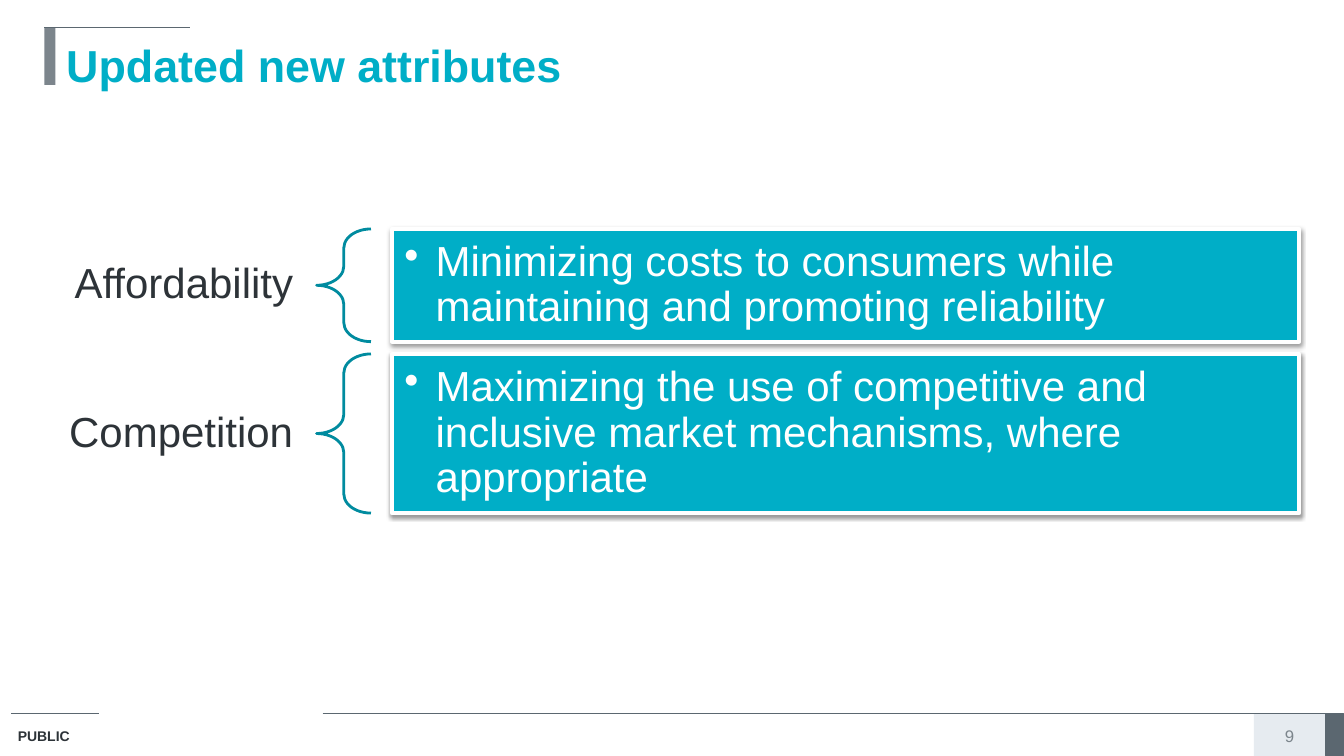
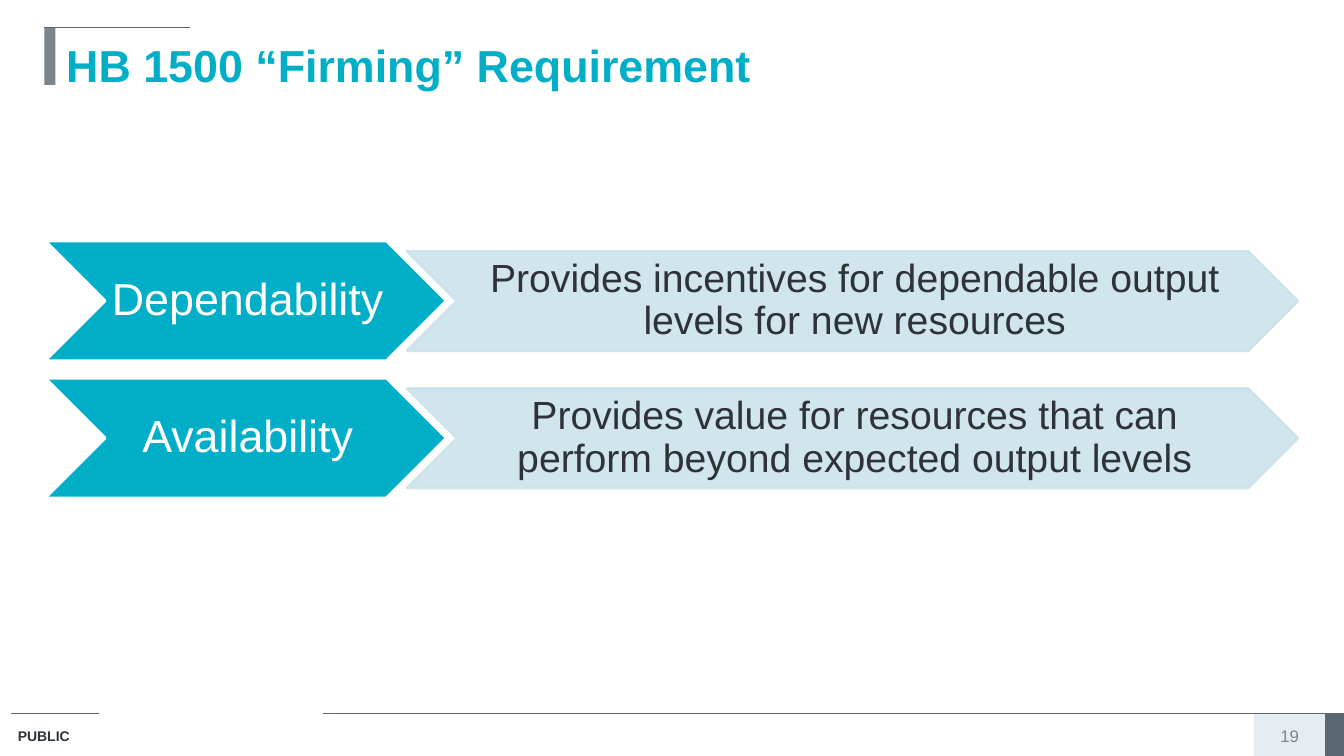
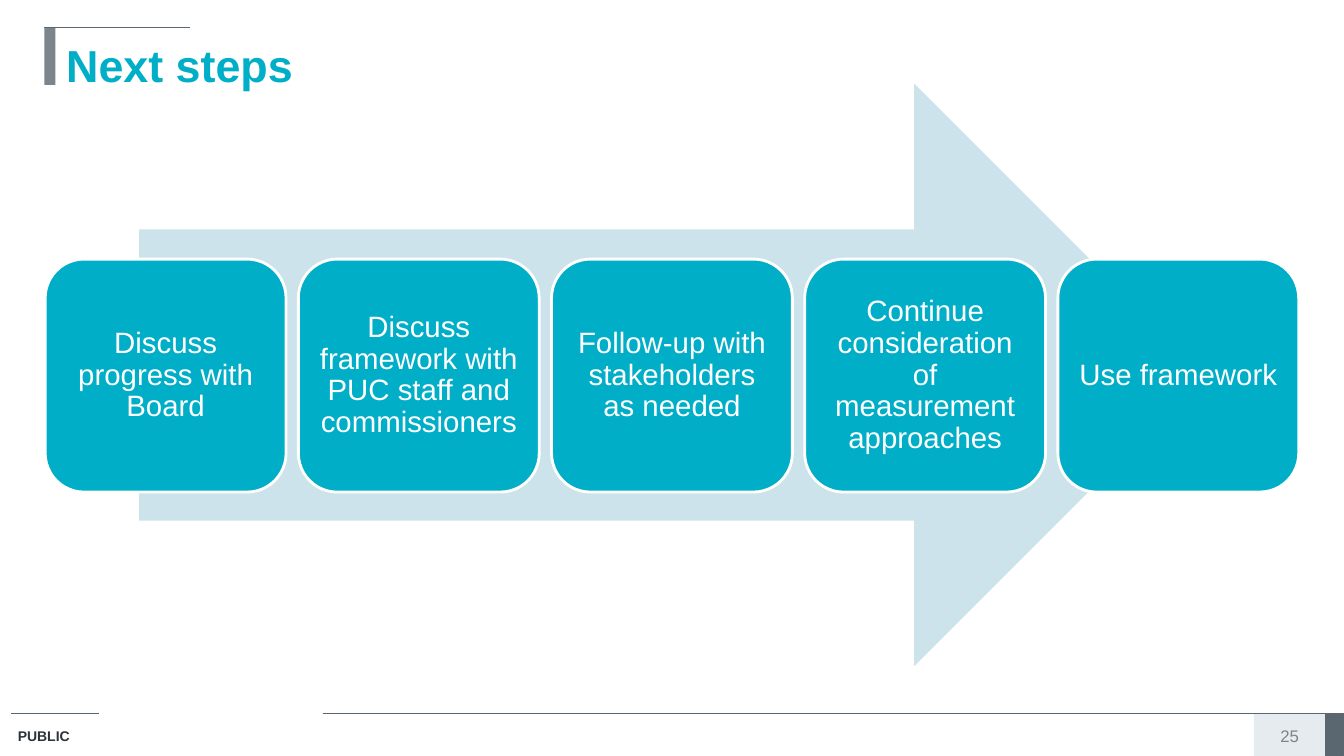
from lxml import etree
from pptx import Presentation
from pptx.dml.color import RGBColor
from pptx.enum.shapes import MSO_CONNECTOR, MSO_SHAPE
from pptx.enum.text import MSO_ANCHOR, PP_ALIGN
from pptx.oxml.ns import qn
from pptx.util import Cm, Pt

RECT = MSO_SHAPE.RECTANGLE
BRACE = MSO_SHAPE.LEFT_BRACE
CHEVRON = MSO_SHAPE.CHEVRON
ARROW = MSO_SHAPE.RIGHT_ARROW
ROUNDED = MSO_SHAPE.ROUNDED_RECTANGLE
STRAIGHT = MSO_CONNECTOR.STRAIGHT
TOP, MIDDLE = MSO_ANCHOR.TOP, MSO_ANCHOR.MIDDLE
LEFT, CENTER, RIGHT = PP_ALIGN.LEFT, PP_ALIGN.CENTER, PP_ALIGN.RIGHT

TEAL = RGBColor(0x00, 0xAE, 0xC7)
DARK_TEAL = RGBColor(0x00, 0x8B, 0x9F)
PALE_TEAL = RGBColor(0xCC, 0xE3, 0xEB)
INK = RGBColor(0x2D, 0x33, 0x38)
SLATE = RGBColor(0x5B, 0x67, 0x70)
GRAY = RGBColor(0x7C, 0x85, 0x8C)
MIST = RGBColor(0xE6, 0xEB, 0xF0)
WHITE = RGBColor(0xFF, 0xFF, 0xFF)

FONT = "Arial"
MARGIN = 1.14
TEXT_INSETS = (0.25, 0.13, 0.25, 0.13)
CHEVRON_INSETS = (0.1, 0.05, 0, 0.05)


class Deck:
    def __init__(self):
        self.prs = Presentation()
        self.prs.slide_width, self.prs.slide_height = Cm(33.87), Cm(19.05)
        self.slide = None

    def new_slide(self, title, number):
        self.slide = self.prs.slides.add_slide(self.prs.slide_layouts[6])
        self.shape(RECT, 31.6, 17.98, 1.98, 1.07, MIST)
        self.shape(RECT, 33.4, 17.98, 0.46, 1.07, SLATE, SLATE, 0.75)
        self.rule(0.28, 2.49, 17.98)
        self.rule(8.13, 33.53, 17.98)
        self.text(0.2, 18.21, 2.62, 0.71, "PUBLIC", 10, INK, bold=True)
        self.shape(RECT, 1.12, 0.69, 0.28, 1.45, GRAY)
        self.rule(1.12, 4.8, 0.69)
        self.text(1.42, 0.69, 31.32, 1.45, title, 32, TEAL, bold=True,
                  insets=(0.25, 0.25, 0.25, 0))
        self.text(31.6, 18.24, 1.8, 0.61, str(number), 12, GRAY, CENTER, MIDDLE)

    def rule(self, start, end, y):
        line = self.slide.shapes.add_connector(STRAIGHT, Cm(start), Cm(y), Cm(end), Cm(y))
        line.line.color.rgb = SLATE
        line.line.width = Pt(0.75)
        etree.SubElement(line._element.spPr, qn("a:effectLst"))

    def shape(self, kind, x, y, w, h, fill=None, outline=None, width=2):
        shape = self.slide.shapes.add_shape(kind, Cm(x), Cm(y), Cm(w), Cm(h))
        shape.shadow.inherit = False
        if fill is None:
            shape.fill.background()
        else:
            shape.fill.solid()
            shape.fill.fore_color.rgb = fill
        if outline is None:
            shape.line.fill.background()
        else:
            shape.line.color.rgb = outline
            shape.line.width = Pt(width)
        return shape

    def text(self, x, y, w, h, words, size, color, align=LEFT, anchor=TOP,
             insets=TEXT_INSETS, spacing=None, bold=False):
        box = self.slide.shapes.add_textbox(Cm(x), Cm(y), Cm(w), Cm(h))
        self.label(box, words, size, color, align, anchor, insets, spacing, bold)

    def label(self, shape, words, size, color, align=CENTER, anchor=MIDDLE,
              insets=TEXT_INSETS, spacing=0.9, bold=False, bullet=None):
        frame = shape.text_frame
        frame.text = words
        frame.word_wrap = True
        frame.vertical_anchor = anchor
        (frame.margin_left, frame.margin_top,
         frame.margin_right, frame.margin_bottom) = map(Cm, insets)
        paragraph = frame.paragraphs[0]
        if bullet:
            properties = paragraph._p.get_or_add_pPr()
            properties.set("marL", str(Cm(0.79)))
            properties.set("indent", str(-Cm(0.79)))
            etree.SubElement(properties, qn("a:buChar"), char=bullet)
        paragraph.alignment = align
        if spacing:
            paragraph.line_spacing = spacing
        font = paragraph.runs[0].font
        font.name, font.size, font.bold = FONT, Pt(size), bold
        font.color.rgb = color

    def drop_shadow(self, shape):
        effects = shape._element.spPr.find(qn("a:effectLst"))
        shadow = etree.SubElement(effects, qn("a:outerShdw"), blurRad=str(Pt(3.1)),
                                  dist=str(Pt(1.6)), dir="5400000", rotWithShape="0")
        black = etree.SubElement(shadow, qn("a:srgbClr"), val="000000")
        etree.SubElement(black, qn("a:alpha"), val="38000")

    def soften(self, shape):
        for color in shape._element.spPr.iter(qn("a:srgbClr")):
            etree.SubElement(color, qn("a:alpha"), val="90000")

    def attribute(self, y, h, name, meaning):
        self.text(MARGIN, y + (h - 1.65) / 2, 6.83, 1.65, name, 30, INK, RIGHT, MIDDLE,
                  (0.58, 0.2, 0.58, 0.2), 0.9)
        brace = self.shape(BRACE, 7.98, y, 1.37, h, outline=DARK_TEAL)
        brace.adjustments[0] = 0.35
        panel = self.shape(RECT, 9.88, y, 22.86, h, TEAL, WHITE, 3)
        self.drop_shadow(panel)
        self.label(panel, meaning, 30, WHITE, LEFT, insets=(0.31,) * 4, bullet="•")

    def requirement(self, y, name, benefit):
        head = self.shape(CHEVRON, MARGIN, y, 10.11, 3.02, TEAL, WHITE)
        self.label(head, name, 32, WHITE, insets=CHEVRON_INSETS)
        detail = self.shape(CHEVRON, 10.26, y + 0.26, 22.45, 2.51, PALE_TEAL, PALE_TEAL)
        self.soften(detail)
        self.label(detail, benefit, 28, INK, insets=CHEVRON_INSETS)

    def step(self, x, words):
        card = self.shape(ROUNDED, x, 6.53, 6.07, 5.87, TEAL, WHITE)
        self.label(card, words, 21, WHITE, insets=(0.22,) * 4)


def main():
    deck = Deck()

    deck.new_slide("Updated new attributes", 9)
    y = 5.77
    for height, name, meaning in (
        (2.84, "Affordability",
         "Minimizing costs to consumers while maintaining and promoting reliability"),
        (4.01, "Competition",
         "Maximizing the use of competitive and inclusive market mechanisms, where appropriate"),
    ):
        deck.attribute(y, height, name, meaning)
        y += height + 0.31

    deck.new_slide("HB 1500 “Firming” Requirement", 19)
    requirements = (
        ("Dependability", "Provides incentives for dependable output levels for new resources"),
        ("Availability",
         "Provides value for resources that can perform beyond expected output levels"),
    )
    for row, (name, benefit) in enumerate(requirements):
        deck.requirement(6.07 + row * 3.46, name, benefit)

    deck.new_slide("Next steps", 25)
    deck.shape(ARROW, 3.51, 2.11, 26.87, 14.68, PALE_TEAL)
    steps = (
        "Discuss progress with Board",
        "Discuss framework with PUC staff and commissioners",
        "Follow-up with stakeholders as needed",
        "Continue consideration of measurement approaches",
        "Use framework",
    )
    for column, words in enumerate(steps):
        deck.step(MARGIN + column * 6.38, words)

    deck.prs.save("out.pptx")


if __name__ == "__main__":
    main()
